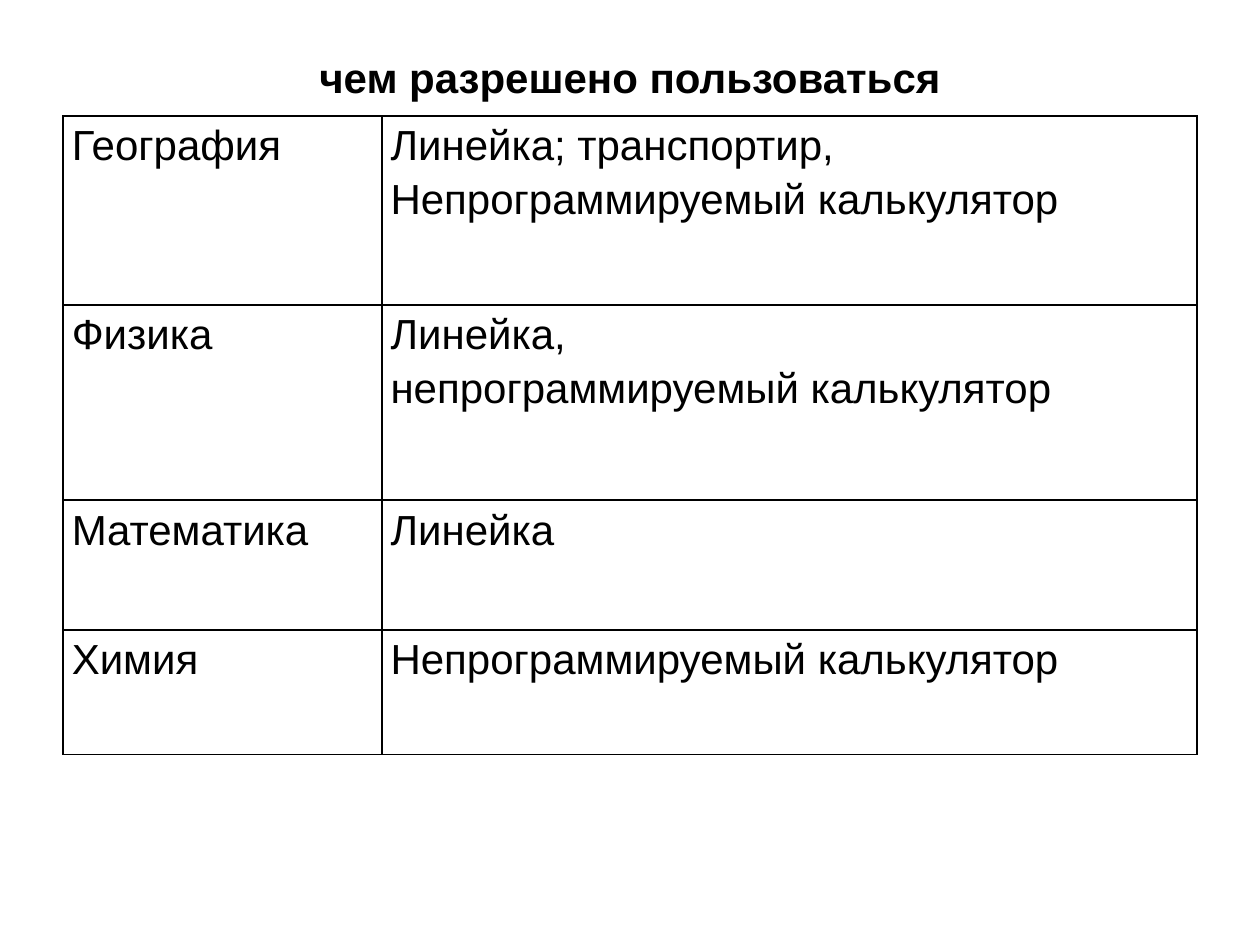
import dataclasses

import pptx
import pptx.dml.color
import pptx.enum.text
import pptx.oxml
import pptx.oxml.ns
import pptx.util

WIDE, HIGH = 10, 7.5
LEFT, SPAN = 0.05 * WIDE, 0.9 * WIDE
FONT, SIZE = "Arial", 24
COLORS = {"ink": "000000", "paper": "FFFFFF"}
COLS = (2.53, 6.47)


@dataclasses.dataclass
class Subject:
    name: str
    tools: list[str]
    height: float


SUBJECTS = [
    Subject("География", ["Линейка; транспортир, Непрограммируемый калькулятор"], 1.5),
    Subject("Физика", ["Линейка,", "непрограммируемый калькулятор"], 1.55),
    Subject("Математика", ["Линейка"], 1.03),
    Subject("Химия", ["Непрограммируемый калькулятор"], 0.99),
]


def color(name: str) -> pptx.dml.color.RGBColor:
    return pptx.dml.color.RGBColor.from_string(COLORS[name])


def write(frame, lines: list[str], space: float, bold: bool = False) -> None:
    """Write one paragraph for each line."""
    for i, line in enumerate(lines):
        par = frame.add_paragraph() if i else frame.paragraphs[0]
        par.line_spacing = space
        run = par.add_run()
        run.text = line
        font = run.font
        font.name, font.size, font.bold = FONT, pptx.util.Pt(SIZE), bold
        font.color.rgb = color("ink")


def border(cell) -> None:
    """Rule all four sides of a cell."""
    props = cell._tc.get_or_add_tcPr()
    for side in "LRTB":
        props.append(pptx.oxml.parse_xml(
            f'<a:ln{side} {pptx.oxml.ns.nsdecls("a")} w="{pptx.util.Pt(1)}">'
            f'<a:solidFill><a:srgbClr val="{COLORS["ink"]}"/></a:solidFill>'
            f'</a:ln{side}>'))


def fill(cell, lines: list[str]) -> None:
    """Style a cell and write its text."""
    border(cell)
    cell.fill.solid()
    cell.fill.fore_color.rgb = color("paper")
    cell.margin_left = cell.margin_right = pptx.util.Inches(0.07)
    cell.margin_top = cell.margin_bottom = 0
    write(cell.text_frame, lines, 1.15)


def head(slide, text: str) -> None:
    """Place and format the title."""
    title = slide.shapes.title
    title.left, title.top, title.width, title.height = map(
        pptx.util.Inches, (LEFT, 0.04 * HIGH, SPAN, 0.61))
    frame = title.text_frame
    frame.word_wrap = True
    frame.vertical_anchor = pptx.enum.text.MSO_ANCHOR.MIDDLE
    write(frame, [text], 1, bold=True)
    frame.paragraphs[0].alignment = pptx.enum.text.PP_ALIGN.CENTER


def grid(slide, subjects: list[Subject]) -> None:
    """Draw the table of subjects and tools."""
    total = sum(item.height for item in subjects)
    table = slide.shapes.add_table(
        len(subjects), len(COLS),
        *map(pptx.util.Inches, (LEFT, 0.92, SPAN, total))).table
    table.first_row = table.horz_banding = False
    for col, width in zip(table.columns, COLS):
        col.width = pptx.util.Inches(width)
    for row, item in zip(table.rows, subjects):
        row.height = pptx.util.Inches(item.height)
        for cell, lines in zip(row.cells, ([item.name], item.tools)):
            fill(cell, lines)


def main() -> None:
    deck = pptx.Presentation()
    deck.slide_width = pptx.util.Inches(WIDE)
    deck.slide_height = pptx.util.Inches(HIGH)
    slide = deck.slides.add_slide(deck.slide_layouts.get_by_name("Title Only"))
    slide.background.fill.solid()
    slide.background.fill.fore_color.rgb = color("paper")
    head(slide, "чем разрешено пользоваться")
    grid(slide, SUBJECTS)
    deck.save("out.pptx")


if __name__ == "__main__":
    main()
